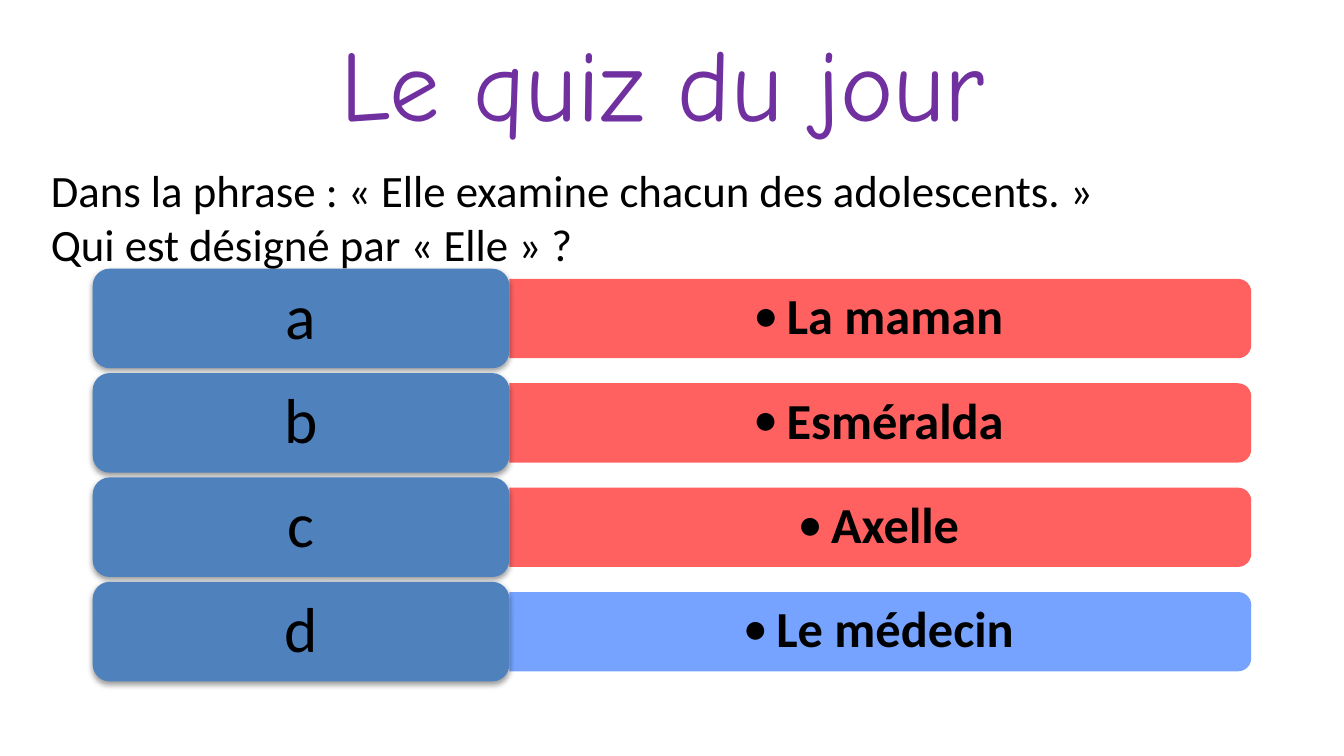
import pptx
import pptx.dml.color
import pptx.enum.shapes
import pptx.enum.text
import pptx.oxml
import pptx.oxml.ns
import pptx.util
from pptx.util import Inches

PURPLE = pptx.dml.color.RGBColor(0x70, 0x30, 0xA0)
BLACK = pptx.dml.color.RGBColor(0, 0, 0)
LABEL_BLUE = pptx.dml.color.RGBColor(0x4F, 0x81, 0xBD)
RED = pptx.dml.color.RGBColor(0xFF, 0x50, 0x50)
LIGHT_BLUE = pptx.dml.color.RGBColor(0x66, 0x99, 0xFF)

ANSWERS = [
    ("a", "La maman", RED),
    ("b", "Esméralda", RED),
    ("c", "Axelle", RED),
    ("d", "Le médecin", LIGHT_BLUE),
]
FIRST_TOP, LAST_TOP = 2, 4.33
PITCH = (LAST_TOP - FIRST_TOP) / (len(ANSWERS) - 1)
LABEL_LEFT, LABEL_WIDTH, LABEL_HEIGHT = 0.69, 3.1, 0.74
BAR_LEFT, BAR_WIDTH, BAR_HEIGHT = LABEL_LEFT + LABEL_WIDTH, 5.52, 0.59
ANSWER_WIDTH, ANSWER_HEIGHT = 5.49, 0.53


def add_run(paragraph, text, size, font="Calibri", color=BLACK, bold=False):
    run = paragraph.add_run()
    run.text = text
    run.font.size = pptx.util.Pt(size)
    run.font.name = font
    run.font.color.rgb = color
    run.font.bold = bold


def center_text(frame, margin_x, margin_y):
    frame.word_wrap = True
    frame.vertical_anchor = pptx.enum.text.MSO_ANCHOR.MIDDLE
    frame.margin_left = frame.margin_right = Inches(margin_x)
    frame.margin_top = frame.margin_bottom = Inches(margin_y)
    paragraph = frame.paragraphs[0]
    paragraph.alignment = pptx.enum.text.PP_ALIGN.CENTER
    paragraph.line_spacing = 0.9
    return paragraph


def add_plain_shape(slide, preset, left, top, width, height, color):
    shape = slide.shapes.add_shape(
        preset, Inches(left), Inches(top), Inches(width), Inches(height))
    shape.shadow.inherit = False
    shape.fill.solid()
    shape.fill.fore_color.rgb = color
    shape.line.fill.background()
    return shape


def add_shadow(shape):
    effects = shape._element.spPr.find(pptx.oxml.ns.qn("a:effectLst"))
    effects.append(pptx.oxml.parse_xml(
        f'<a:outerShdw {pptx.oxml.ns.nsdecls("a")} blurRad="40000" dist="20000" '
        'dir="5400000" rotWithShape="0"><a:srgbClr val="000000">'
        '<a:alpha val="38000"/></a:srgbClr></a:outerShdw>'))


def add_bullet(paragraph):
    properties = paragraph._p.get_or_add_pPr()
    properties.set("marL", str(Inches(0.25)))
    properties.set("indent", str(Inches(-0.25)))
    for bullet_part in ('buFont {} typeface="Calibri"', 'buChar {} char="•"'):
        properties.append(pptx.oxml.parse_xml(
            f'<a:{bullet_part.format(pptx.oxml.ns.nsdecls("a"))}/>'))


def add_title(slide):
    title = slide.shapes.title
    title.left, title.top = Inches(0.67), Inches(0.21)
    title.width, title.height = Inches(8.62), Inches(0.79)
    title.text_frame.vertical_anchor = pptx.enum.text.MSO_ANCHOR.MIDDLE
    heading = title.text_frame.paragraphs[0]
    heading.alignment = pptx.enum.text.PP_ALIGN.CENTER
    add_run(heading, " ", 41, "Quicksand", PURPLE)
    add_run(heading, "Le quiz du jour ", 54, "Comic Neue", PURPLE)


def add_question(slide):
    question = slide.shapes.add_textbox(
        Inches(0.28), Inches(1.16), Inches(8.03), Inches(0.91)).text_frame
    question.word_wrap = False
    question.auto_size = pptx.enum.text.MSO_AUTO_SIZE.SHAPE_TO_FIT_TEXT
    add_run(question.paragraphs[0],
            "Dans la phrase : « Elle examine chacun des adolescents. »", 24)
    add_run(question.add_paragraph(), "Qui est désigné par « Elle » ?", 24)


def add_bar(slide, middle, color):
    bar = add_plain_shape(
        slide, pptx.enum.shapes.MSO_SHAPE.ROUND_2_SAME_RECTANGLE,
        BAR_LEFT + (BAR_WIDTH - BAR_HEIGHT) / 2, middle - BAR_WIDTH / 2,
        BAR_HEIGHT, BAR_WIDTH, color)
    bar.rotation = 90
    fill_color = bar._element.spPr.find(".//" + pptx.oxml.ns.qn("a:srgbClr"))
    fill_color.append(pptx.oxml.parse_xml(
        f'<a:alpha {pptx.oxml.ns.nsdecls("a")} val="90000"/>'))


def add_answer(slide, middle, text):
    answer = slide.shapes.add_textbox(
        Inches(BAR_LEFT), Inches(middle - ANSWER_HEIGHT / 2),
        Inches(ANSWER_WIDTH), Inches(ANSWER_HEIGHT))
    paragraph = center_text(answer.text_frame, 0.11, 0.06)
    paragraph.level = 1
    add_bullet(paragraph)
    add_run(paragraph, text, 27, bold=True)


def add_label(slide, top, letter):
    label = add_plain_shape(
        slide, pptx.enum.shapes.MSO_SHAPE.ROUNDED_RECTANGLE,
        LABEL_LEFT, top, LABEL_WIDTH, LABEL_HEIGHT, LABEL_BLUE)
    label.adjustments[0] = 0.17
    add_shadow(label)
    add_run(center_text(label.text_frame, 0.14, 0.07), letter, 34)


def main():
    presentation = pptx.Presentation()
    presentation.slide_width = Inches(10)
    presentation.slide_height = presentation.slide_width * 9 // 16
    slide = presentation.slides.add_slide(presentation.slide_layouts[5])
    add_title(slide)
    for row, (letter, text, color) in enumerate(ANSWERS):
        top = FIRST_TOP + row * PITCH
        middle = top + LABEL_HEIGHT / 2
        add_bar(slide, middle, color)
        add_answer(slide, middle, text)
        add_label(slide, top, letter)
    add_question(slide)
    presentation.save("out.pptx")


if __name__ == "__main__":
    main()
